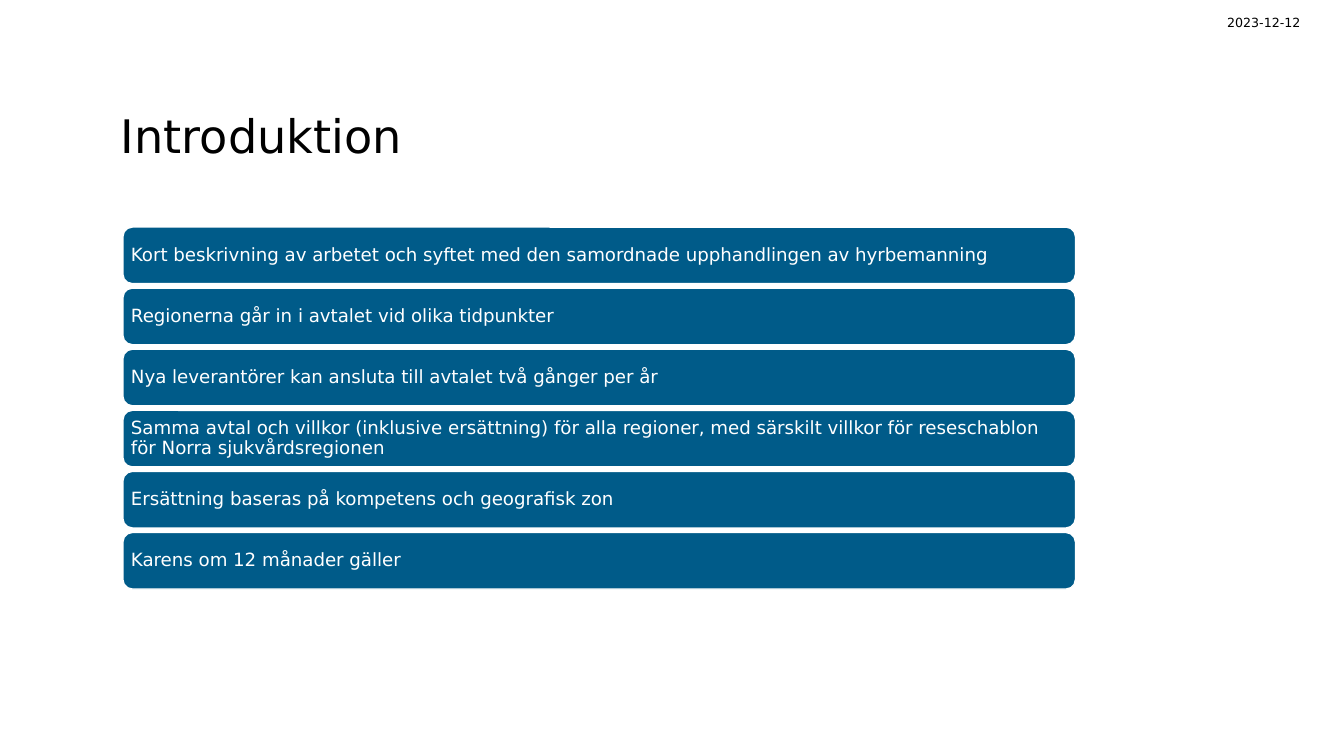
"""Build the introduction slide: a title, a date and six stacked agenda bars."""
import pptx
import pptx.dml.color
import pptx.enum.shapes
import pptx.enum.text
import pptx.util

Pt = pptx.util.Pt
RGB = pptx.dml.color.RGBColor.from_string
ALIGN = pptx.enum.text.PP_ALIGN
ANCHOR = pptx.enum.text.MSO_ANCHOR

THEME = {
    "font": "DejaVu Sans",
    "bar": RGB("005B89"),
    "light": RGB("FFFFFF"),
    "dark": RGB("000000"),
    "title_size": 33,
    "bar_size": 13,
    "date_size": 9,
}

POINTS = [
    "Kort beskrivning av arbetet och syftet med den samordnade upphandlingen av hyrbemanning",
    "Regionerna går in i avtalet vid olika tidpunkter",
    "Nya leverantörer kan ansluta till avtalet två gånger per år",
    "Samma avtal och villkor (inklusive ersättning) för alla regioner, "
    "med särskilt villkor för reseschablon för Norra sjukvårdsregionen",
    "Ersättning baseras på kompetens och geografisk zon",
    "Karens om 12 månader gäller",
]
BAR_LEFT, BAR_TOP, BAR_WIDTH, BAR_HEIGHT = 87.8, 162.2, 680.4, 40.4
BAR_PITCH = 43.63


def write(sp, text, size, color, anchor, align=ALIGN.LEFT, spacing=1.0, inset=0):
    """Fill a shape with one styled paragraph."""
    tf = sp.text_frame
    tf.word_wrap = True
    tf.vertical_anchor = anchor
    tf.margin_left = tf.margin_right = tf.margin_top = tf.margin_bottom = Pt(inset)
    p = tf.paragraphs[0]
    p.alignment = align
    p.line_spacing = spacing
    r = p.add_run()
    r.text = text
    r.font.name = THEME["font"]
    r.font.size = Pt(size)
    r.font.color.rgb = color


prs = pptx.Presentation()
prs.slide_width, prs.slide_height = Pt(960), Pt(540)
s = prs.slides.add_slide(prs.slide_layouts[6])

title = s.shapes.add_textbox(Pt(86.4), Pt(33.8), Pt(680.4), Pt(82.8))
write(title, "Introduktion", THEME["title_size"], THEME["dark"], ANCHOR.BOTTOM, spacing=1.1)

date = s.shapes.add_textbox(Pt(858.2), Pt(10.8), Pt(70.6), Pt(10.8))
write(date, "2023-12-12", THEME["date_size"], THEME["dark"], ANCHOR.MIDDLE, ALIGN.RIGHT)

for i, text in enumerate(POINTS):
    bar = s.shapes.add_shape(
        pptx.enum.shapes.MSO_SHAPE.ROUNDED_RECTANGLE,
        Pt(BAR_LEFT), Pt(BAR_TOP + i * BAR_PITCH), Pt(BAR_WIDTH), Pt(BAR_HEIGHT),
    )
    bar.shadow.inherit = False
    bar.fill.solid()
    bar.fill.fore_color.rgb = THEME["bar"]
    bar.line.color.rgb = THEME["light"]
    bar.line.width = Pt(1)
    write(bar, text, THEME["bar_size"], THEME["light"], ANCHOR.MIDDLE, spacing=0.9, inset=3.8)

prs.save("out.pptx")
